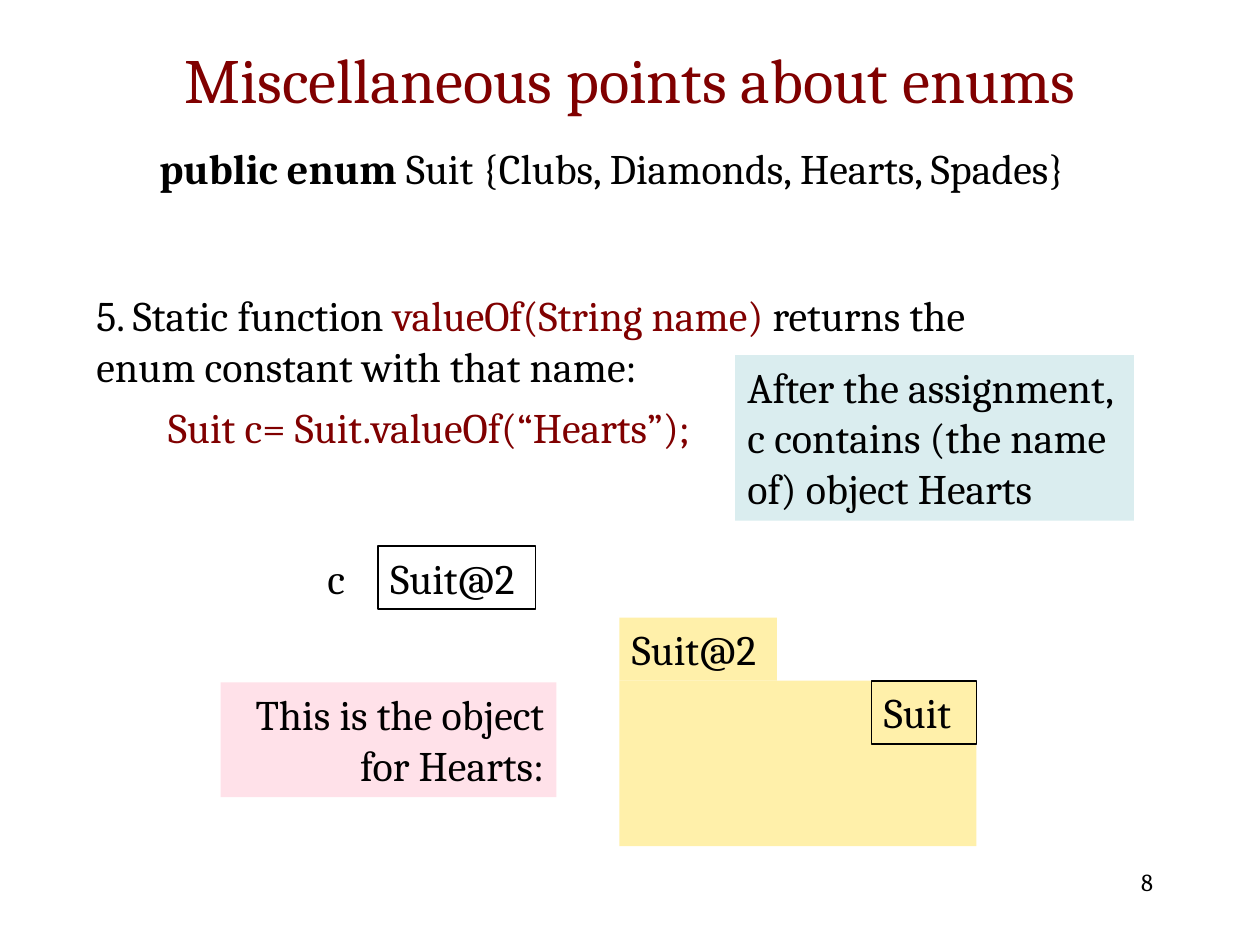
from dataclasses import dataclass
from typing import Optional

from pptx import Presentation
from pptx.dml.color import RGBColor as Rgb
from pptx.enum.shapes import MSO_SHAPE as Shape
from pptx.enum.text import MSO_ANCHOR as Anchor, PP_ALIGN as Align
from pptx.util import Pt

FONT = "Cambria"
COLORS = {
    "black": "000000",
    "red": "800000",
    "blue": "DAEDEF",
    "yellow": "FFF0AA",
    "pink": "FFE1E9",
}


@dataclass
class Run:
    text: str
    color: str = "black"
    bold: bool = False


@dataclass
class Para:
    runs: list[Run]
    before: float = 0
    indent: float = 0


@dataclass
class Box:
    left: float
    top: float
    width: float
    height: float
    paras: list[Para]
    fill: Optional[str] = None
    line: Optional[str] = None
    align: Align = Align.LEFT
    size: float = 24
    wrap: bool = True


def rgb(name: str) -> Rgb:
    return Rgb.from_string(COLORS[name])


def plain(text: str) -> list[Para]:
    return [Para([Run(text)])]


def write(frame, paras: list[Para], size: float, align: Align) -> None:
    for i, para in enumerate(paras):
        p = frame.add_paragraph() if i else frame.paragraphs[0]
        p.alignment = align
        p.space_before = Pt(para.before)
        if para.indent:
            p._p.get_or_add_pPr().set("marL", str(Pt(para.indent)))
        for run in para.runs:
            r = p.add_run()
            r.text = run.text
            font = r.font
            font.name, font.size, font.bold = FONT, Pt(size), run.bold
            font.color.rgb = rgb(run.color)


def draw(slide, box: Box) -> None:
    place = [Pt(n) for n in (box.left, box.top, box.width, box.height)]
    if box.fill or box.line:
        shape = slide.shapes.add_shape(Shape.RECTANGLE, *place)
        shape.shadow.inherit = False
        if box.fill:
            shape.fill.solid()
            shape.fill.fore_color.rgb = rgb(box.fill)
        else:
            shape.fill.background()
        if box.line:
            shape.line.color.rgb = rgb(box.line)
            shape.line.width = Pt(1)
        else:
            shape.line.fill.background()
    else:
        shape = slide.shapes.add_textbox(*place)
    frame = shape.text_frame
    frame.word_wrap = box.wrap
    frame.vertical_anchor = Anchor.TOP
    write(frame, box.paras, box.size, box.align)


# Text of the main point
ENUM = [Para([Run("public enum ", bold=True),
              Run("Suit {Clubs, Diamonds, Hearts, Spades}")])]
POINT = [
    Para([Run("5. Static function "), Run("valueOf(String name)", "red"),
          Run(" returns the enum constant with that name:")]),
    Para([Run("Suit c= Suit.valueOf(“Hearts”);", "red")], before=6, indent=41),
]

# The object: a name tab on a body, with its class in the top right corner
LEFT, TOP, WIDE, ROW = 354, 389, 204, 36
TAB, KIND = 90, 60

BOXES = [
    Box(516, 492, 150, 36, plain("8"), align=Align.RIGHT, size=14),
    Box(84, 78, 546, 36, ENUM),
    Box(48, 162, 522, 101, POINT),
    Box(420, 203, 228, 94.5, plain(
        "After the assignment, c contains (the name of) object Hearts"),
        fill="blue"),
    # Variable c
    Box(180, 312, 25, ROW, plain("c"), wrap=False),
    Box(216, 312, TAB, ROW, plain("Suit@2"), line="black"),
    # Object for Hearts
    Box(LEFT, TOP - ROW, TAB, ROW, plain("Suit@2"), fill="yellow"),
    Box(LEFT, TOP, WIDE, 94.5, [], fill="yellow"),
    Box(LEFT + WIDE - KIND, TOP, KIND, ROW, plain("Suit"), line="black"),
    Box(126, 390, 192, 65.5, plain("This is the object for Hearts:"),
        fill="pink", align=Align.RIGHT),
]


def main() -> None:
    deck = Presentation()
    deck.slide_width, deck.slide_height = Pt(720), Pt(540)
    slide = deck.slides.add_slide(deck.slide_layouts[5])

    # Title
    title = slide.shapes.title
    title.left, title.top = Pt(54), Pt(24)
    title.width, title.height = Pt(612), Pt(42)
    title.text_frame.vertical_anchor = Anchor.MIDDLE
    write(title.text_frame,
          [Para([Run("Miscellaneous points about enums", "red")])],
          36, Align.CENTER)

    for box in BOXES:
        draw(slide, box)
    deck.save("out.pptx")


if __name__ == "__main__":
    main()
